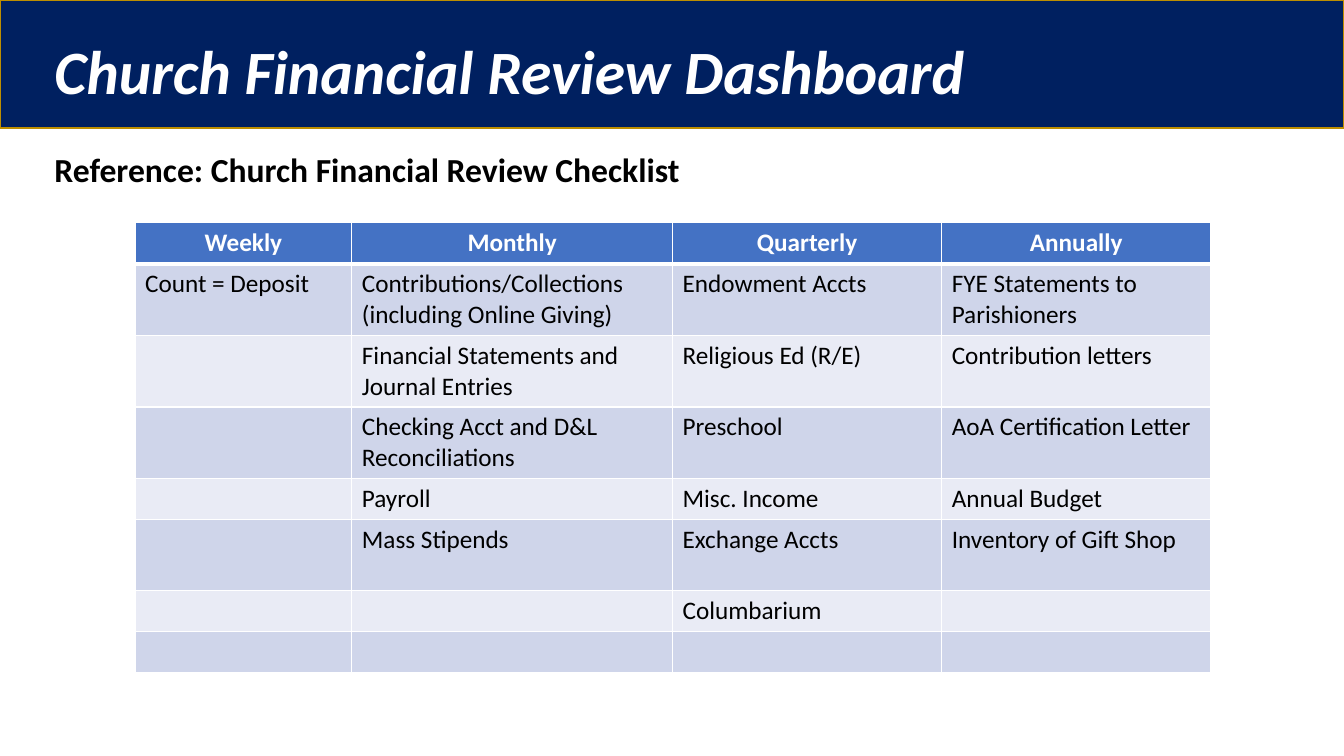
import pptx
import pptx.dml.color
import pptx.enum.shapes
import pptx.enum.text
import pptx.oxml
import pptx.oxml.ns
import pptx.util

NAVY, GOLD, WHITE, BLACK = "002060", "BD8E00", "FFFFFF", "000000"
HEADER_BLUE, BANDS = "4472C4", ("CFD5EA", "E9EBF5")

# Table content by row, and its sizes in percent of the slide
REVIEWS = [
    ("Weekly", "Monthly", "Quarterly", "Annually"),
    ("Count = Deposit", "Contributions/Collections (including Online Giving)",
     "Endowment Accts", "FYE Statements to Parishioners"),
    ("", "Financial Statements and Journal Entries", "Religious Ed (R/E)",
     "Contribution letters"),
    ("", "Checking Acct and D&L Reconciliations", "Preschool",
     "AoA Certification Letter"),
    ("", "Payroll", "Misc. Income", "Annual Budget"),
    ("", "Mass Stipends", "Exchange Accts", "Inventory of Gift Shop"),
    ("", "", "Columbarium", ""),
    ("", "", "", ""),
]
COLUMN_WIDTHS = (16.13, 23.86, 20.03, 20.03)
SINGLE, DOUBLE = 5.4, 9.4
ROW_HEIGHTS = (SINGLE, DOUBLE, DOUBLE, DOUBLE, SINGLE, DOUBLE, SINGLE, SINGLE)


def color(hex_string):
    return pptx.dml.color.RGBColor.from_string(hex_string)


class DashboardSlide:
    """Holds the style and the slide; lengths are percent of the slide's size."""

    font_name = "Calibri"

    def __init__(self, presentation):
        self.percent_x = presentation.slide_width / 100
        self.percent_y = presentation.slide_height / 100
        self.slide = presentation.slides.add_slide(presentation.slide_layouts[1])
        self.title_shape, self.body_shape = self.slide.placeholders

    def x(self, share):
        return pptx.util.Emu(round(share * self.percent_x))

    def y(self, share):
        return pptx.util.Emu(round(share * self.percent_y))

    def box(self, left, top, width, height):
        return self.x(left), self.y(top), self.x(width), self.y(height)

    def style(self, paragraph, size, hex_string, bold=False, italic=False):
        font = paragraph.font
        font.name, font.size = self.font_name, pptx.util.Pt(size)
        font.bold, font.italic = bold, italic
        font.color.rgb = color(hex_string)

    def banner(self, *place):
        shape = self.slide.shapes.add_shape(
            pptx.enum.shapes.MSO_SHAPE.RECTANGLE, *self.box(*place))
        shape.shadow.inherit = False
        shape.fill.solid()
        shape.fill.fore_color.rgb = color(NAVY)
        shape.line.color.rgb = color(GOLD)
        shape.line.width = pptx.util.Pt(1)
        # Keep the banner behind the title
        self.title_shape.element.addprevious(shape.element)

    def placeholder(self, shape, text, place, size, hex_string, italic=False):
        shape.left, shape.top, shape.width, shape.height = self.box(*place)
        frame = shape.text_frame
        frame.text = text
        frame.word_wrap = True
        frame.auto_size = pptx.enum.text.MSO_AUTO_SIZE.NONE
        frame.vertical_anchor = pptx.enum.text.MSO_ANCHOR.TOP
        paragraph = frame.paragraphs[0]
        paragraph.alignment = pptx.enum.text.PP_ALIGN.LEFT
        paragraph.space_before = pptx.util.Pt(0)
        self.style(paragraph, size, hex_string, bold=True, italic=italic)
        # No bullet and no hanging indent
        properties = paragraph.font._element.getparent()
        properties.set("marL", "0")
        properties.set("indent", "0")
        bullet = pptx.oxml.parse_xml(
            f'<a:buNone {pptx.oxml.ns.nsdecls("a")}/>')
        paragraph.font._element.addprevious(bullet)

    def cell_borders(self, cell, widths):
        properties = cell._tc.get_or_add_tcPr()
        for index, (side, points) in enumerate(zip("LRTB", widths)):
            properties.insert(index, pptx.oxml.parse_xml(
                f'<a:ln{side} {pptx.oxml.ns.nsdecls("a")} '
                f'w="{pptx.util.Pt(points)}"><a:solidFill>'
                f'<a:srgbClr val="{WHITE}"/></a:solidFill></a:ln{side}>'))

    def table(self, left, top, rows, widths, heights):
        table = self.slide.shapes.add_table(
            len(rows), len(widths),
            *self.box(left, top, sum(widths), sum(heights))).table
        table.first_row = table.horz_banding = False
        for column, width in zip(table.columns, widths):
            column.width = self.x(width)
        for row_index, texts in enumerate(rows):
            table.rows[row_index].height = self.y(heights[row_index])
            header = row_index == 0
            fill = HEADER_BLUE if header else BANDS[(row_index - 1) % 2]
            for column_index, text in enumerate(texts):
                cell = table.cell(row_index, column_index)
                cell.text = text
                cell.fill.solid()
                cell.fill.fore_color.rgb = color(fill)
                paragraph = cell.text_frame.paragraphs[0]
                self.style(paragraph, 18, WHITE if header else BLACK, bold=header)
                if header:
                    paragraph.alignment = pptx.enum.text.PP_ALIGN.CENTER
                top_width = 3 if row_index == 1 else 1
                bottom_width = 3 if header else 1
                self.cell_borders(cell, (1, 1, top_width, bottom_width))


def main():
    presentation = pptx.Presentation()
    presentation.slide_width = pptx.util.Inches(13.33)
    presentation.slide_height = pptx.util.Inches(7.5)
    dashboard = DashboardSlide(presentation)

    # Heading
    dashboard.banner(0, 0, 100, 16.93)
    dashboard.placeholder(
        dashboard.title_shape, "Church Financial Review Dashboard",
        (3.3, 3.73, 93.3, 11.4), 44, WHITE, italic=True)
    dashboard.placeholder(
        dashboard.body_shape, "Reference: Church Financial Review Checklist",
        (3.3, 19.07, 93.3, 6.8), 24, BLACK)

    # Review schedule
    dashboard.table(10.05, 29.47, REVIEWS, COLUMN_WIDTHS, ROW_HEIGHTS)

    presentation.save("out.pptx")


if __name__ == "__main__":
    main()
